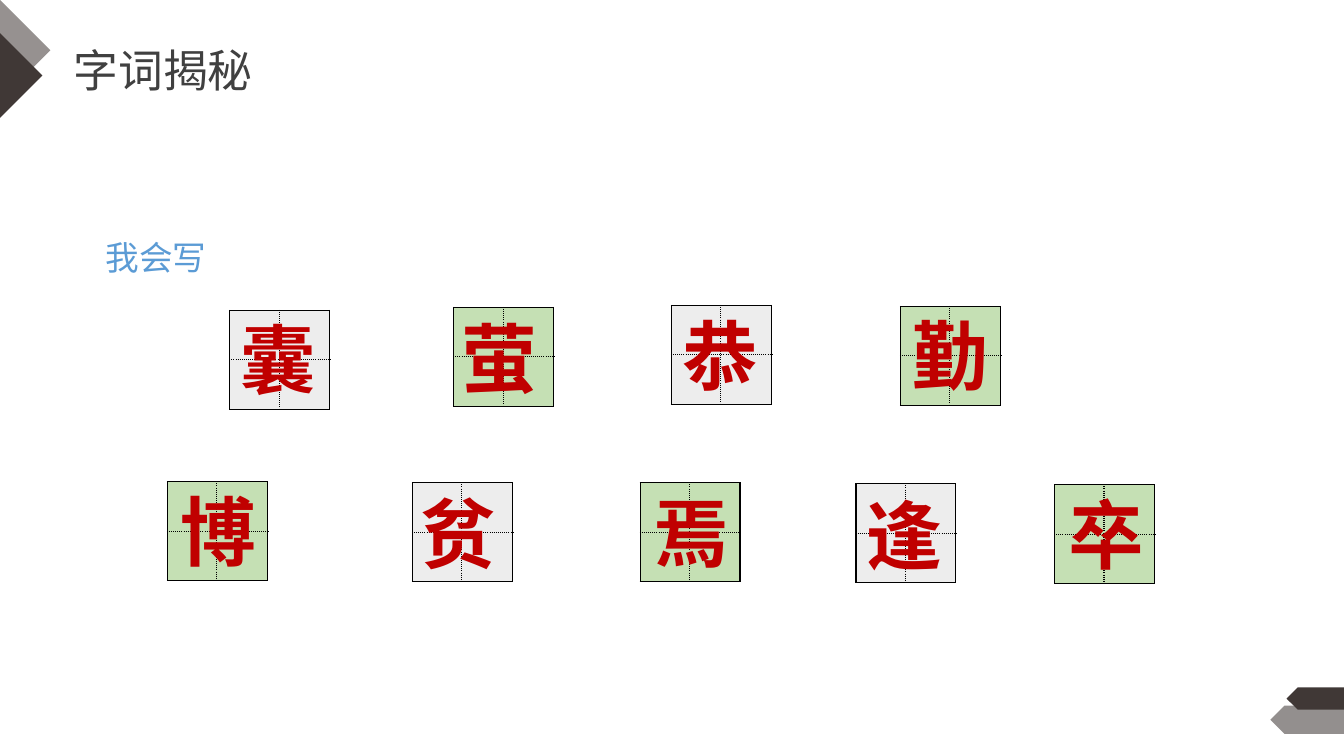
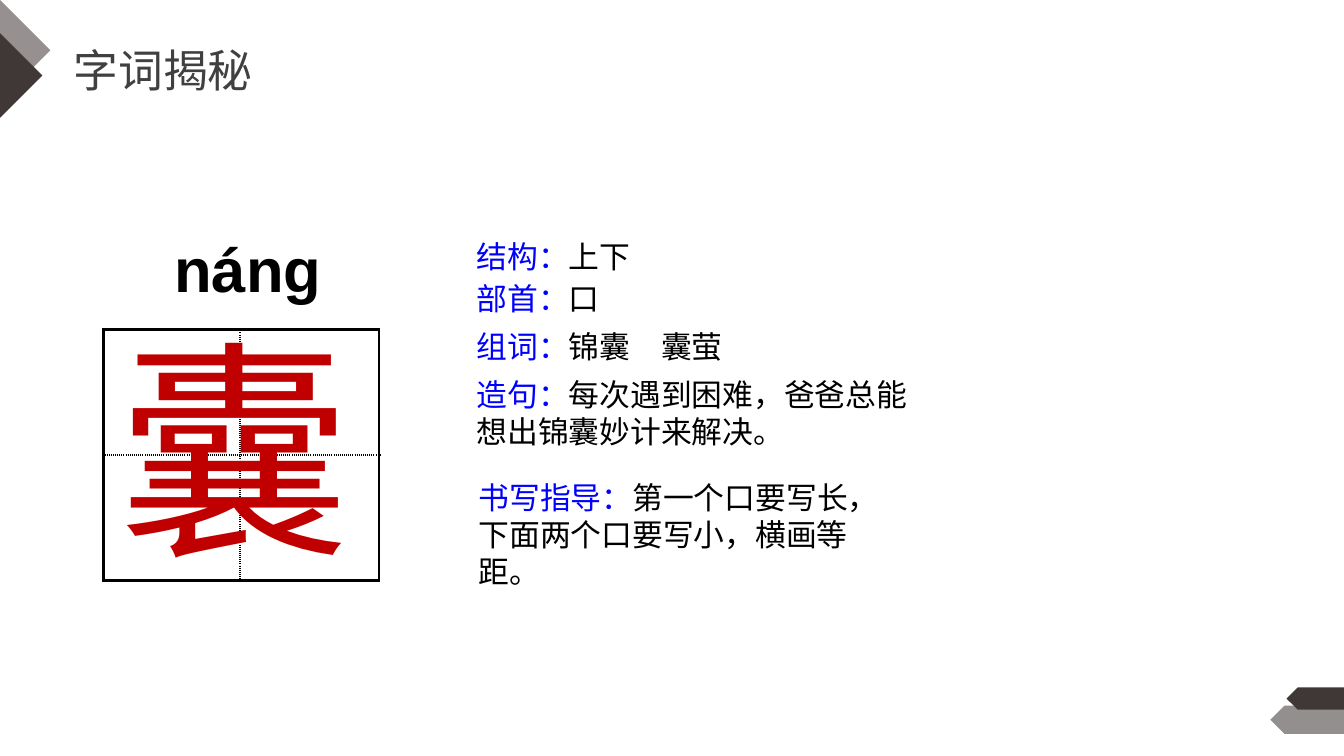
from dataclasses import dataclass
from typing import NamedTuple

from lxml import etree
from pptx import Presentation
from pptx.dml.color import RGBColor
from pptx.enum import shapes as es, text as et
from pptx.oxml import ns
from pptx.util import Inches, Pt


@dataclass(frozen=True)
class Theme:
    font: str = "Arial"
    brand: str = "403836"
    title: str = "404040"
    heading: str = "5B9BD5"
    label: str = "0000FF"
    ink: str = "000000"
    glyph: str = "C00000"
    paper: str = "FFFFFF"
    grey: str = "EDEDED"
    green: str = "C5E0B4"
    title_pt: int = 32
    heading_pt: int = 24
    note_pt: int = 22
    tile_pt: int = 54
    pinyin_pt: int = 44
    model_pt: int = 166


THEME = Theme()


class Box(NamedTuple):
    left: float
    top: float
    width: float
    height: float

    def emu(self) -> list:
        return [Inches(length) for length in self]


class Span(NamedTuple):
    text: str
    color: str
    size: int
    bold: bool = False
    outline: str = ""


class Tile(NamedTuple):
    """One character on its practice square; the glyph box has its own origin."""
    char: str
    left: float
    top: float
    glyph_left: float
    glyph_top: float
    fill: str


class Note(NamedTuple):
    label: str
    body: str
    box: Box


class Grid(NamedTuple):
    """A two by two practice square with a solid frame and dotted centre lines."""
    left: float
    top: float
    cols: tuple
    rows: tuple
    frame_pt: float
    guide_pt: float
    fill: str = ""


TILES = (
    Tile("囊", 2.28, 3.08, 2.29, 3.05, THEME.grey),
    Tile("萤", 4.5, 3.05, 4.48, 3.04, THEME.green),
    Tile("恭", 6.66, 3.03, 6.67, 3.02, THEME.grey),
    Tile("勤", 8.93, 3.04, 8.95, 3.02, THEME.green),
    Tile("博", 1.66, 4.78, 1.69, 4.76, THEME.green),
    Tile("贫", 4.09, 4.79, 4.07, 4.78, THEME.grey),
    Tile("焉", 6.35, 4.79, 6.38, 4.77, THEME.green),
    Tile("逢", 8.49, 4.8, 8.5, 4.8, THEME.grey),
    Tile("卒", 10.46, 4.81, 10.5, 4.79, THEME.green),
)

NOTES = (
    Note("结构：", "上下", Box(4.63, 2.31, 2.56, 0.47)),
    Note("部首：", "口", Box(4.63, 2.73, 3.18, 0.47)),
    Note("组词：", "锦囊　囊萤", Box(4.63, 3.2, 2.95, 0.47)),
    Note("造句：", "每次遇到困难，爸爸总能想出锦囊妙计来解决。",
         Box(4.63, 3.68, 4.56, 0.84)),
    Note("书写指导：", "第一个口要写长，下面两个口要写小，横画等距。",
         Box(4.65, 4.7, 4.03, 1.21)),
)


def line_xml(tag: str, color: str, points: float, dash: str = "solid"):
    line = etree.Element(ns.qn(tag), w=str(Pt(points)))
    fill = etree.SubElement(line, ns.qn("a:solidFill"))
    etree.SubElement(fill, ns.qn("a:srgbClr"), val=color)
    etree.SubElement(line, ns.qn("a:prstDash"), val=dash)
    return line


def add_text(slide, box: Box, *spans: Span, wrap: bool = True) -> None:
    frame = slide.shapes.add_textbox(*box.emu()).text_frame
    frame.word_wrap = wrap
    frame.auto_size = et.MSO_AUTO_SIZE.SHAPE_TO_FIT_TEXT
    for span in spans:
        run = frame.paragraphs[0].add_run()
        run.text = span.text
        formats = {"name": THEME.font, "size": Pt(span.size), "bold": span.bold}
        for attribute, value in formats.items():
            setattr(run.font, attribute, value)
        run.font.color.rgb = RGBColor.from_string(span.color)
        if span.outline:
            run.font._element.insert(0, line_xml("a:ln", span.outline, 0.75))


def paint(shape, opacity: int = 100) -> None:
    """Fill a decoration in the brand colour, without line or shadow."""
    shape.shadow.inherit = False
    shape.line.fill.background()
    shape.fill.solid()
    shape.fill.fore_color.rgb = RGBColor.from_string(THEME.brand)
    if opacity < 100:
        color = shape._element.spPr.find(".//" + ns.qn("a:srgbClr"))
        etree.SubElement(color, ns.qn("a:alpha"), val=str(opacity * 1000))


def add_corner(slide, top: float, width: float, height: float, opacity: int) -> None:
    """Draw a triangle on the left edge, pointing right."""
    builder = slide.shapes.build_freeform(0, Inches(top))
    builder.add_line_segments([
        (Inches(width), Inches(top + height / 2)),
        (0, Inches(top + height)),
    ])
    paint(builder.convert_to_shape(), opacity)


def add_ribbon(slide, box: Box, opacity: int) -> None:
    ribbon = slide.shapes.add_shape(es.MSO_SHAPE.PENTAGON, *box.emu())
    ribbon.rotation = 180
    paint(ribbon, opacity)


def add_grid(slide, grid: Grid) -> None:
    box = Box(grid.left, grid.top, sum(grid.cols), sum(grid.rows))
    table = slide.shapes.add_table(2, 2, *box.emu()).table
    for flag in ("first_row", "horz_banding"):
        setattr(table, flag, False)
    for index in range(2):
        table.columns[index].width = Inches(grid.cols[index])
        table.rows[index].height = Inches(grid.rows[index])
    for row in range(2):
        for col in range(2):
            cell = table.cell(row, col)
            on_frame = {"L": col == 0, "R": col == 1, "T": row == 0, "B": row == 1}
            properties = cell._tc.get_or_add_tcPr()
            for side, outer in on_frame.items():
                points = grid.frame_pt if outer else grid.guide_pt
                dash = "solid" if outer else "sysDot"
                properties.append(line_xml(f"a:ln{side}", THEME.ink, points, dash))
            if grid.fill:
                cell.fill.solid()
                cell.fill.fore_color.rgb = RGBColor.from_string(grid.fill)
            else:
                cell.fill.background()


def new_slide(deck):
    """Add a slide with the shared decorations and title."""
    slide = deck.slides.add_slide(deck.slide_layouts[6])
    add_ribbon(slide, Box(12.6, 7, 0.74, 0.28), 56)
    add_ribbon(slide, Box(12.76, 6.82, 0.58, 0.22), 100)
    add_corner(slide, 0, 0.5, 1, 55)
    add_corner(slide, 0.33, 0.42, 0.84, 100)
    add_text(slide, Box(0.63, 0.37, 4.51, 0.64),
             Span("字词揭秘", THEME.title, THEME.title_pt))
    return slide


def build_writing_list(deck) -> None:
    slide = new_slide(deck)
    add_text(slide, Box(0.95, 2.3, 1.21, 0.5),
             Span("我会写", THEME.heading, THEME.heading_pt), wrap=False)
    for tile in TILES:
        add_grid(slide, Grid(tile.left, tile.top, (0.49, 0.5), (0.49, 0.49),
                             1, 1, tile.fill))
        add_text(slide, Box(tile.glyph_left, tile.glyph_top, 0.98, 1.01),
                 Span(tile.char, THEME.glyph, THEME.tile_pt, True, THEME.paper),
                 wrap=False)


def build_character_study(deck) -> None:
    slide = new_slide(deck)
    for note in NOTES:
        add_text(slide, note.box,
                 Span(note.label, THEME.label, THEME.note_pt),
                 Span(note.body, THEME.ink, THEME.note_pt))
    add_grid(slide, Grid(1.03, 3.27, (1.35, 1.38), (1.24, 1.25), 2.25, 1.5))
    add_text(slide, Box(1.08, 2.99, 2.53, 2.89),
             Span("囊", THEME.glyph, THEME.model_pt), wrap=False)
    add_text(slide, Box(1.63, 2.24, 1.72, 0.84),
             Span("náng", THEME.ink, THEME.pinyin_pt, True), wrap=False)


def main() -> None:
    deck = Presentation()
    deck.slide_width, deck.slide_height = Inches(13.33), Inches(7.5)
    build_writing_list(deck)
    build_character_study(deck)
    deck.save("out.pptx")


if __name__ == "__main__":
    main()
